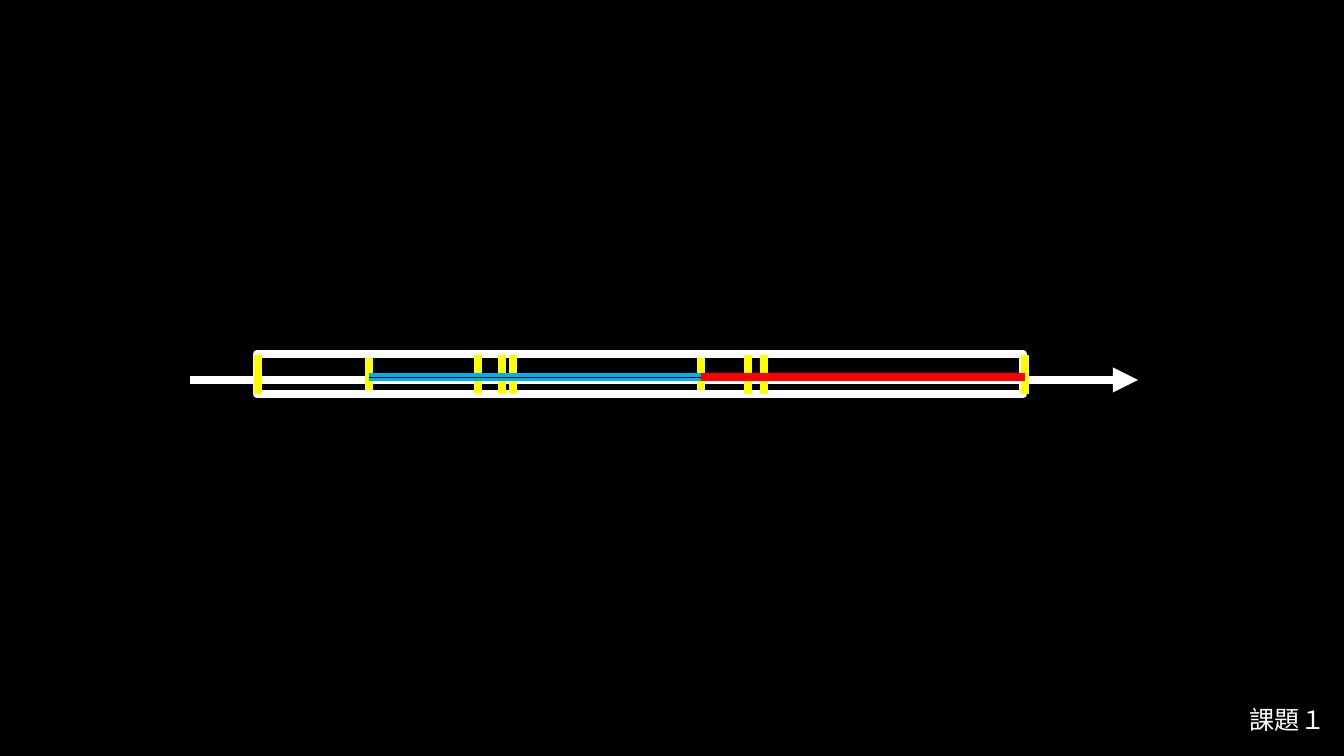
from dataclasses import dataclass

from lxml import etree
from pptx import Presentation
from pptx.dml.color import RGBColor
from pptx.enum import shapes, text
from pptx.oxml import ns
from pptx.util import Pt


@dataclass(frozen=True)
class Theme:
    ground: RGBColor = RGBColor(0x00, 0x00, 0x00)
    white: RGBColor = RGBColor(0xFF, 0xFF, 0xFF)
    tick: RGBColor = RGBColor(0xFF, 0xFF, 0x00)
    first_span: RGBColor = RGBColor(0x00, 0xB0, 0xF0)
    second_span: RGBColor = RGBColor(0xFF, 0x00, 0x00)
    font: str = "Noto Sans CJK JP"
    label_size: float = 18
    thick: float = 6
    hairline: float = 0.25


theme = Theme()
deck = Presentation()
deck.slide_width, deck.slide_height = Pt(960), Pt(540)
page = deck.slides.add_slide(deck.slide_layouts[6])
page.background.fill.solid()
page.background.fill.fore_color.rgb = theme.ground


def add_line(x1, y1, x2, y2, color, width=theme.thick, arrow=False):
    line = page.shapes.add_connector(
        shapes.MSO_CONNECTOR.STRAIGHT, Pt(x1), Pt(y1), Pt(x2), Pt(y2))
    line.line.color.rgb = color
    line.line.width = Pt(width)
    if arrow:
        outline = line.line._get_or_add_ln()
        etree.SubElement(outline, ns.qn("a:tailEnd"), type="triangle")
    etree.SubElement(line._element.spPr, ns.qn("a:effectLst"))


def add_text(words, left, top, width, height, size, color, font):
    box = page.shapes.add_textbox(Pt(left), Pt(top), Pt(width), Pt(height))
    box.text_frame.word_wrap = True
    box.text_frame.auto_size = text.MSO_AUTO_SIZE.SHAPE_TO_FIT_TEXT
    para = box.text_frame.paragraphs[0]
    span = para.add_run()
    span.text = words
    span.font.size = Pt(size)
    span.font.color.rgb = color
    span.font.name = font
    etree.SubElement(span.font._element, ns.qn("a:ea"), typeface=font)


axis_y, span_y = 271.4, 269.3
tick_top, tick_bottom = 253.4, 281.5
span_start, span_middle, span_end = 263.5, 500.6, 732.2

add_line(135.4, axis_y, 812.9, axis_y, theme.white, arrow=True)

for x in (span_start, span_middle):
    add_line(x, tick_top, x, tick_bottom, theme.tick)

frame = page.shapes.add_shape(
    shapes.MSO_SHAPE.RECTANGLE, Pt(183.6), Pt(252.7), Pt(547.2), Pt(28.8))
frame.shadow.inherit = False
frame.fill.background()
frame.line.color.rgb = theme.white
frame.line.width = Pt(theme.thick)

for x in (341.3, 534.2, 358.6, 545.8, 366.5, 184.3, span_end):
    add_line(x, tick_top, x, tick_bottom, theme.tick)

add_text("課題１", 885.6, 499.7, 74.9, 28.8,
         size=theme.label_size, color=theme.white, font=theme.font)

for start, end, color, width in (
    (span_middle, span_start, theme.first_span, theme.thick),
    (span_middle, span_end, theme.second_span, theme.thick),
    (span_start, span_middle, theme.ground, theme.hairline),
):
    add_line(start, span_y, end, span_y, color, width)

deck.save("out.pptx")
